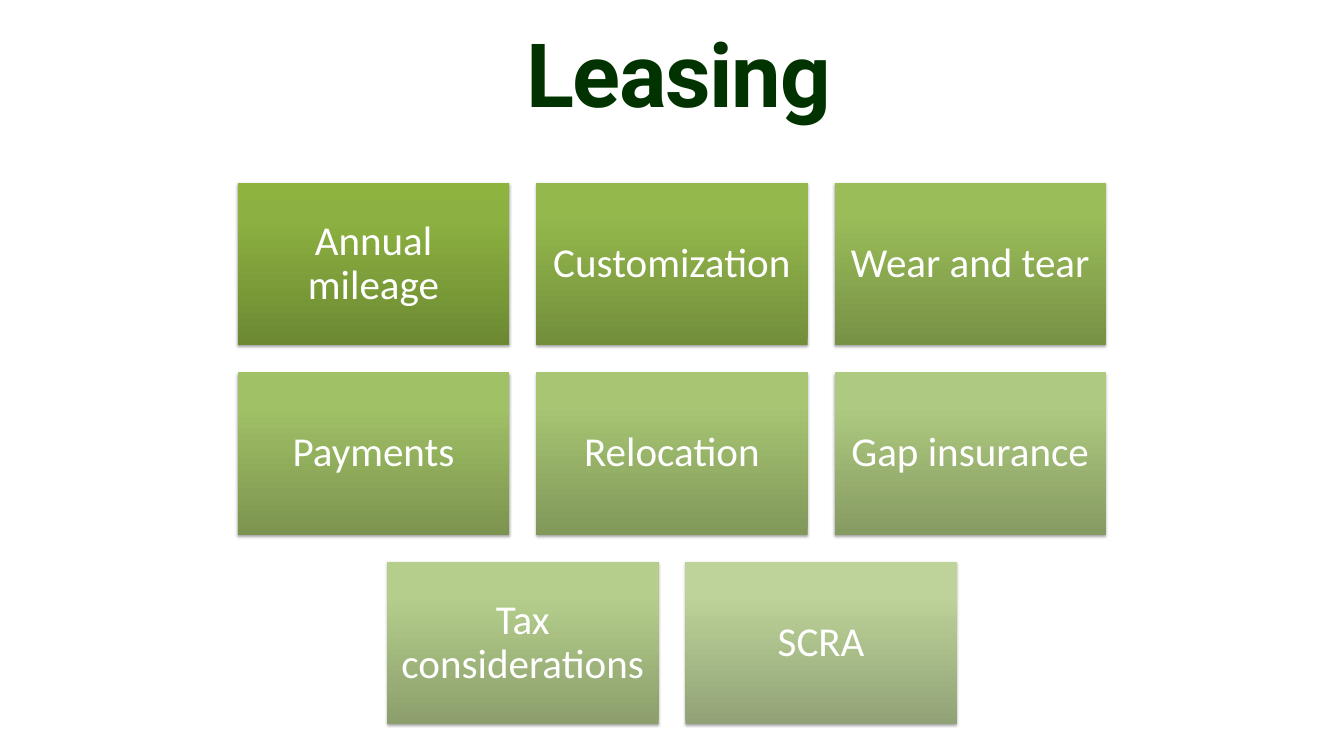
"""Build the Leasing slide: a title above a centred grid of gradient cards."""
import copy
import pptx
import pptx.util
import pptx.dml.color
import pptx.enum.shapes
import pptx.enum.text
import pptx.oxml
import pptx.oxml.ns
from pptx.dml.color import RGBColor
from pptx.util import Inches, Pt

DARK = RGBColor(0x00, 0x33, 0x00)
WHITE = RGBColor(0xFF, 0xFF, 0xFF)
STOPS = (0, 0.8, 1)
ROWS = [
    [("Annual mileage", "6C8932 8DB141 8EB43F"),
     ("Customization", "728E3B 94B84C 95BB4B"),
     ("Wear and tear", "779145 9ABC59 9BBF58")],
    [("Payments", "7C944F A1C166 A2C365"),
     ("Relocation", "819859 A7C573 A9C872"),
     ("Gap insurance", "869B62 AECA80 AFCC7F")],
    [("Tax considerations", "8C9F6C B5CE8C B6D08C"),
     ("SCRA", "91A276 BDD399 BED599")],
]
WIDE, HIGH, GAP, TOP, MID = 4.04, 2.42, 0.4, 2.72, 10
SIDES = ("margin_left", "margin_top", "margin_right", "margin_bottom")
TITLE = {"name": "Roboto", "size": Pt(95), "bold": True}
LABEL = {"name": "Calibri", "size": Pt(44)}
SHADOW = (
    f'<a:outerShdw {pptx.oxml.ns.nsdecls("a")} blurRad="{Pt(3.1)}" '
    f'dist="{Pt(1.8)}" dir="5400000" rotWithShape="0">'
    '<a:srgbClr val="000000"><a:alpha val="35000"/></a:srgbClr></a:outerShdw>'
)


def put(items, goal):
    for key, value in items.items():
        setattr(goal, key, value)


def write(shape, text, font, color, inset, frame, para):
    body = shape.text_frame
    put({**dict.fromkeys(SIDES, Inches(inset)), **frame}, body)
    line = body.paragraphs[0]
    put(para, line)
    run = line.add_run()
    run.text = text
    put(font, run.font)
    run.font.color.rgb = color
    return run


def shade(shape, colors):
    fill = shape.fill
    fill.gradient()
    fill.gradient_angle = 90
    first = shape._element.spPr.find(".//" + pptx.oxml.ns.qn("a:gs"))
    first.addnext(copy.deepcopy(first))
    for stop, place, color in zip(fill.gradient_stops, STOPS, colors.split()):
        stop.position = place
        stop.color.rgb = RGBColor.from_string(color)
    shape.line.fill.background()
    shape.shadow.inherit = False
    effect = shape._element.spPr.find(pptx.oxml.ns.qn("a:effectLst"))
    effect.append(pptx.oxml.parse_xml(SHADOW))


def main():
    deck = pptx.Presentation()
    put({"slide_width": Inches(20), "slide_height": Inches(11.25)}, deck)
    slide = deck.slides.add_slide(deck.slide_layouts[6])
    anchor = pptx.enum.text.MSO_ANCHOR
    fit = pptx.enum.text.MSO_AUTO_SIZE

    box = slide.shapes.add_textbox(
        Inches(7.83), Inches(0.96), Inches(5.36), Inches(1.02))
    run = write(box, "Leasing", TITLE, DARK, 0,
                {"word_wrap": True, "auto_size": fit.SHAPE_TO_FIT_TEXT},
                {"line_spacing": Pt(65)})
    run.font._element.set("spc", "-150")

    group = slide.shapes.add_group_shape()
    for row, cards in enumerate(ROWS):
        count = len(cards)
        left = MID - (count * WIDE + (count - 1) * GAP) / 2
        for col, (text, colors) in enumerate(cards):
            card = group.shapes.add_shape(
                pptx.enum.shapes.MSO_SHAPE.RECTANGLE,
                Inches(left + col * (WIDE + GAP)),
                Inches(TOP + row * (HIGH + GAP)),
                Inches(WIDE), Inches(HIGH))
            shade(card, colors)
            write(card, text, LABEL, WHITE, 0.18,
                  {"word_wrap": True, "vertical_anchor": anchor.MIDDLE},
                  {"alignment": pptx.enum.text.PP_ALIGN.CENTER,
                   "line_spacing": 0.9})
    deck.save("out.pptx")


if __name__ == "__main__":
    main()
